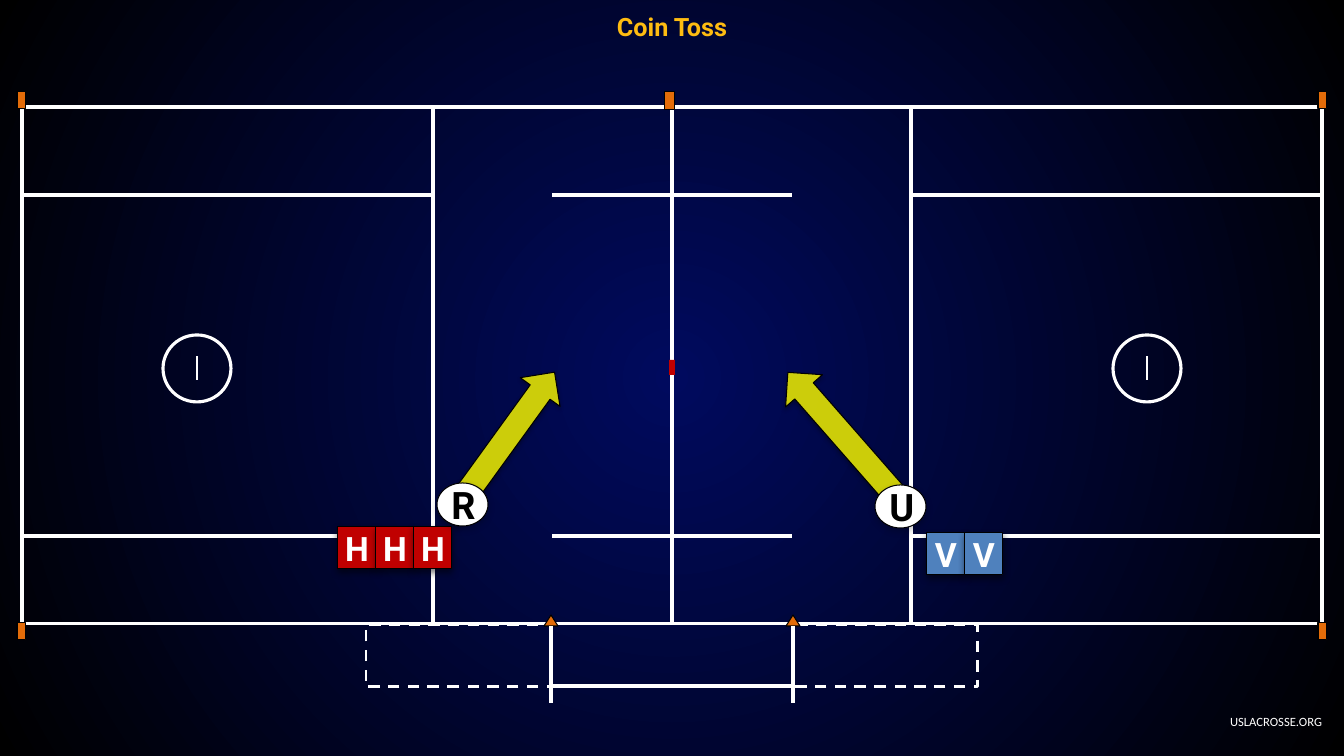
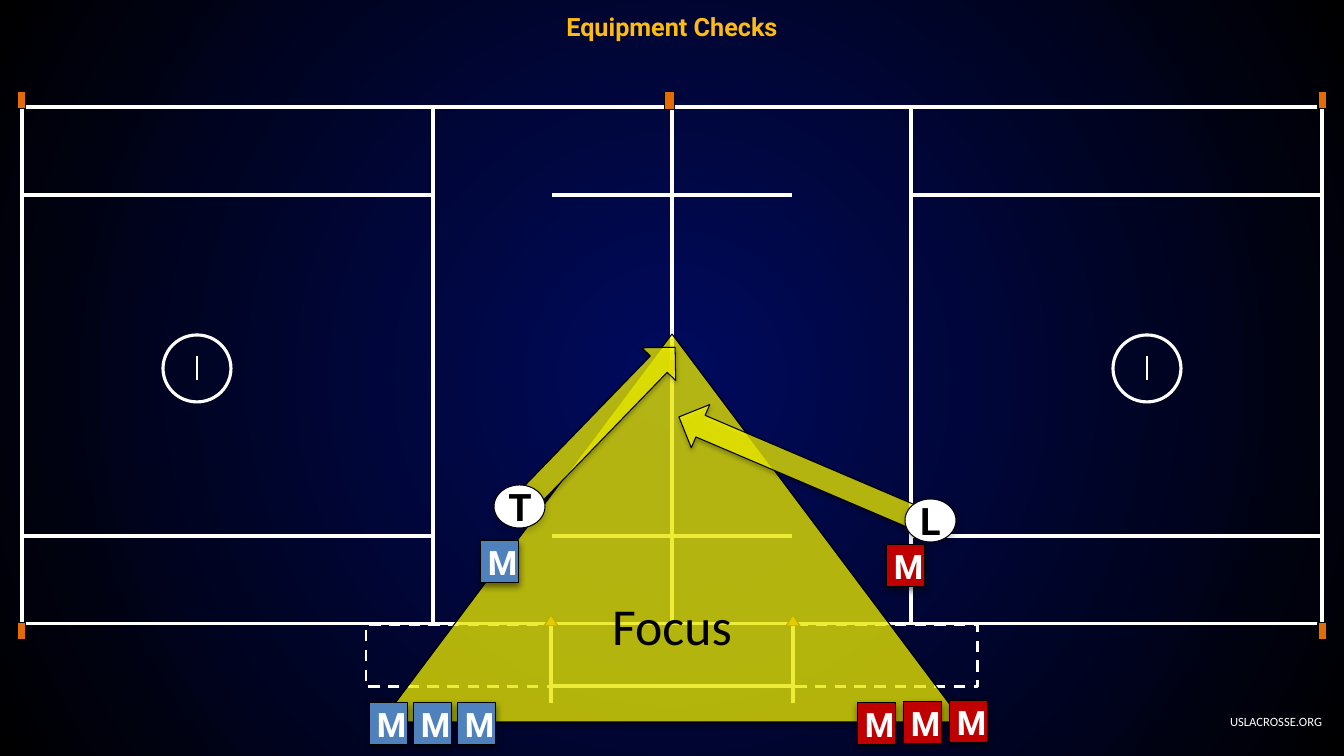
from pptx import Presentation
from pptx.dml.color import RGBColor
from pptx.enum.dml import MSO_LINE
from pptx.enum.shapes import MSO_CONNECTOR, MSO_SHAPE as SHAPE
from pptx.enum.text import MSO_ANCHOR, MSO_AUTO_SIZE, PP_ALIGN as ALIGN
from pptx.oxml import parse_xml
from pptx.oxml.ns import nsdecls, qn
from pptx.util import Pt

# Scale and shared formats
WIDTH, HEIGHT = 1344, 756
PX = 12192000 / WIDTH
COLOURS = {
    "navy": "000A5E", "black": "000000", "white": "FFFFFF", "gold": "FEBC11",
    "orange": "E36C09", "red": "C00000", "blue": "4F81BD", "yellow": "FFFF00",
}
FONTS = {
    "title": {"name": "Roboto", "size": Pt(18), "bold": True},
    "official": {"name": "Roboto", "size": Pt(27), "bold": True},
    "player": {"name": "Roboto", "size": Pt(24), "bold": True},
    "focus": {"name": "Calibri", "size": Pt(37), "bold": False},
    "footer": {"name": "Calibri", "size": Pt(9), "bold": False},
}
# Shadow: opacity in percent, blur and distance in points
SHADOWS = {"arrow": (35, 3.1, 1.8), "official": (20, 5, 2), "player": (50, 5, 2)}


def draw(page, kind, place, fill=None, line="black", weight=0.75, opacity=100, shadow=None):
    shape = page.shapes.add_shape(kind, *[round(value * PX) for value in place])
    shape.shadow.inherit = False
    properties = shape.element.spPr
    if fill:
        shape.fill.solid()
        shape.fill.fore_color.rgb = RGBColor.from_string(COLOURS[fill])
        if opacity < 100:
            properties.find(qn("a:solidFill"))[0].append(
                parse_xml(f'<a:alpha {nsdecls("a")} val="{opacity * 1000}"/>'))
    else:
        shape.fill.background()
    if line:
        shape.line.color.rgb = RGBColor.from_string(COLOURS[line])
        shape.line.width = Pt(weight)
    else:
        shape.line.fill.background()
    if shadow:
        strength, blur, distance = SHADOWS[shadow]
        properties.find(qn("a:effectLst")).append(parse_xml(
            f'<a:outerShdw {nsdecls("a")} blurRad="{Pt(blur)}" dist="{Pt(distance)}" '
            f'dir="5400000" rotWithShape="0"><a:srgbClr val="{COLOURS["black"]}">'
            f'<a:alpha val="{strength * 1000}"/></a:srgbClr></a:outerShdw>'))
    return shape


def write(box, text, font, colour, inset, align=ALIGN.CENTER):
    frame = box.text_frame
    across, down = [round(value * PX) for value in inset]
    layout = {
        "margin_left": across, "margin_right": across, "margin_top": down, "margin_bottom": down,
        "word_wrap": True, "auto_size": MSO_AUTO_SIZE.NONE, "vertical_anchor": MSO_ANCHOR.MIDDLE,
    }
    for name, value in layout.items():
        setattr(frame, name, value)
    para = frame.paragraphs[0]
    para.alignment = align
    span = para.add_run()
    span.text = text
    for name, value in FONTS[font].items():
        setattr(span.font, name, value)
    span.font.color.rgb = RGBColor.from_string(COLOURS[colour])


# Half of the field; the other half is its mirror image
FIELD_AREAS = [(433, 107, 239, 517), (22, 107, 411, 88), (22, 536, 411, 88), (22, 195, 411, 341)]
CORNER_CONES = [(17, 92, 9, 17), (17, 623, 9, 17)]
FIELD_LINES = [  # x and y of both ends, weight
    (197, 380, 197, 356, 1.5), (551, 703, 551, 626, 2.25),
    (672, 536, 552, 536, 2.25), (672, 195, 552, 195, 2.25), (672, 686, 552, 686, 2.25),
]
HALF_FIELD = (
    [(SHAPE.RECTANGLE, place, None, "white", 2.25) for place in FIELD_AREAS]
    + [(SHAPE.RECTANGLE, place, "orange", "black", 0.75) for place in CORNER_CONES]
    + [(SHAPE.RECTANGLE, (366, 625, 185, 62), None, "white", 2),
       (SHAPE.ISOSCELES_TRIANGLE, (544, 615, 14, 11), "orange", "black", 0.75),
       (SHAPE.OVAL, (163, 335, 68, 67), None, "white", 2.25)]
)
BENCH_WEIGHT = 2

# What differs from slide to slide
SLIDES = [
    {
        "title": "Coin Toss",
        "focus": None,
        "opacity": 80,
        "arrows": [(411, 421, 181, 49, 305.9), (757, 416, 181, 49, 228.8)],
        "players": [("H", "red", 338 + 38 * step, 527) for step in range(3)]
        + [("V", "blue", 927 + 38 * step, 533) for step in range(2)],
        "officials": [("R", 437, 483), ("U", 875, 485)],
    },
    {
        "title": "Equipment Checks",
        "focus": (381, 334, 582, 388),
        "opacity": 70,
        "arrows": [(481, 406, 229, 47, 314.1), (668, 447, 273, 47, 203.1)],
        "players": [("M", "blue", 481, 541), ("M", "red", 887, 545)]
        + [("M", "blue", 370 + 44 * step, 703) for step in range(3)]
        + [("M", "red", 858 + 46 * step, 703 - step) for step in range(3)],
        "officials": [("T", 494, 485), ("L", 905, 499)],
    },
]

deck = Presentation()
deck.slide_width, deck.slide_height = round(WIDTH * PX), round(HEIGHT * PX)

# Radial background on the master
master = deck.slide_master
master.background.fill.solid()
plain = master.element.xpath("p:cSld/p:bg/p:bgPr/a:solidFill")[0]
plain.getparent().replace(plain, parse_xml(
    f'<a:gradFill {nsdecls("a")} rotWithShape="1"><a:gsLst>'
    f'<a:gs pos="0"><a:srgbClr val="{COLOURS["navy"]}"/></a:gs>'
    f'<a:gs pos="100000"><a:srgbClr val="{COLOURS["black"]}"/></a:gs></a:gsLst>'
    '<a:path path="circle"><a:fillToRect l="50000" t="50000" r="50000" b="50000"/></a:path>'
    '</a:gradFill>'))

for content in SLIDES:
    page = deck.slides.add_slide(deck.slide_layouts[5])

    # Title and footer
    title = page.shapes.title
    title.left, title.top, title.width, title.height = [
        round(value * PX) for value in (0, 5, WIDTH, 42)]
    write(title, content["title"], "title", "gold", (10, 5))
    footer = page.shapes.add_textbox(*[round(value * PX) for value in (1218, 709, 114, 25)])
    write(footer, "USLACROSSE.ORG", "footer", "white", (10, 5), ALIGN.RIGHT)

    # Field, left half and then right half
    for mirrored in (False, True):
        for kind, (left, top, width, height), fill, line, weight in HALF_FIELD:
            if mirrored:
                left = WIDTH - left - width
            shape = draw(page, kind, (left, top, width, height), fill, line, weight)
            if weight == BENCH_WEIGHT:
                shape.line.dash_style = MSO_LINE.DASH
        for x1, y1, x2, y2, weight in FIELD_LINES:
            if mirrored:
                x1, x2 = WIDTH - x1, WIDTH - x2
            mark = page.shapes.add_connector(
                MSO_CONNECTOR.STRAIGHT, *[round(value * PX) for value in (x1, y1, x2, y2)])
            mark.line.color.rgb = RGBColor.from_string(COLOURS["white"])
            mark.line.width = Pt(weight)
            mark.element.spPr.append(parse_xml(f'<a:effectLst {nsdecls("a")}/>'))

    # Midfield cone and centre mark
    draw(page, SHAPE.RECTANGLE, (665, 92, 10, 18), "orange")
    draw(page, SHAPE.RECTANGLE, (669, 360, 6, 15), "red", None)

    # Focus area and movement arrows
    if content["focus"]:
        focus = draw(page, SHAPE.ISOSCELES_TRIANGLE, content["focus"], "yellow",
                     opacity=content["opacity"], shadow="arrow")
        write(focus, "Focus", "focus", "black", (13, 7))
    for *place, angle in content["arrows"]:
        arrow = draw(page, SHAPE.RIGHT_ARROW, place, "yellow",
                     opacity=content["opacity"], shadow="arrow")
        arrow.rotation = angle

    # Players and officials
    for letter, team, left, top in content["players"]:
        player = draw(page, SHAPE.RECTANGLE, (left, top, 38, 42), team, shadow="player")
        write(player, letter, "player", "white", (7, 7))
    for letter, left, top in content["officials"]:
        official = draw(page, SHAPE.OVAL, (left, top, 51, 43), "white", shadow="official")
        write(official, letter, "official", "black", (7, 7))

deck.save("out.pptx")
